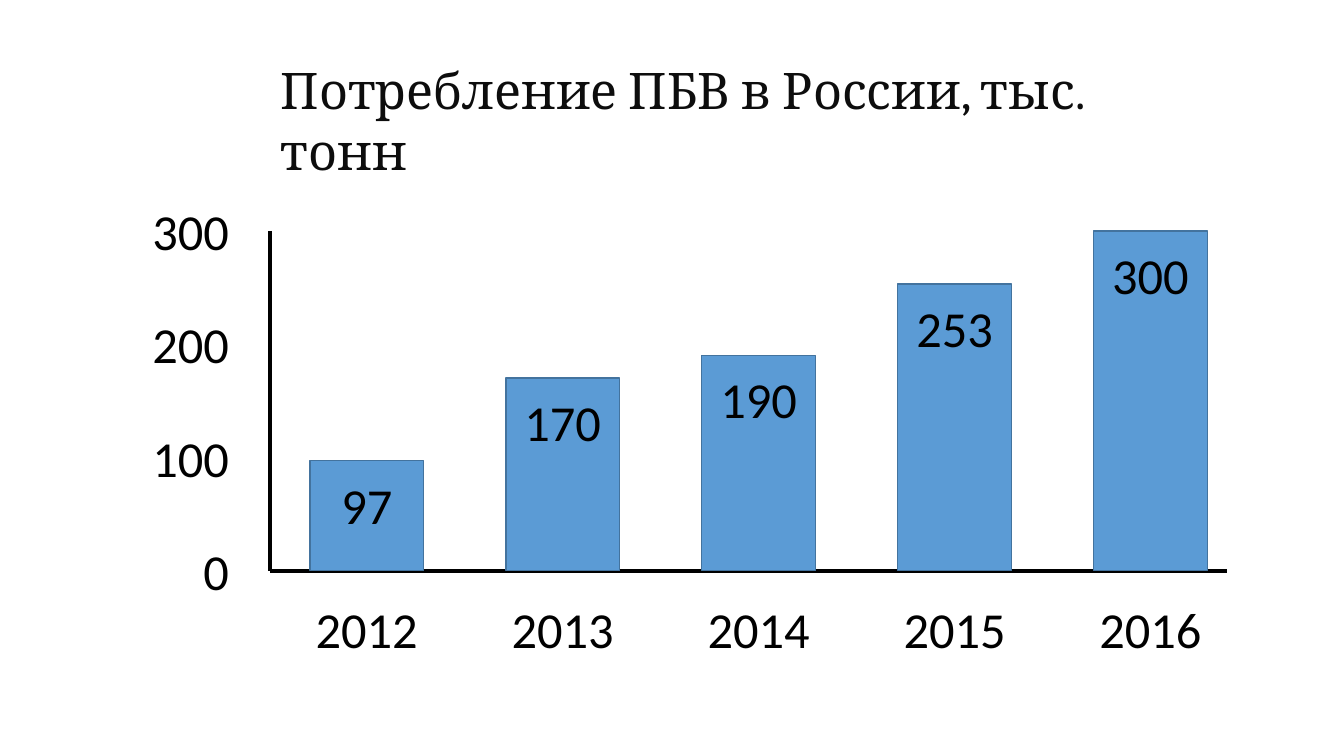
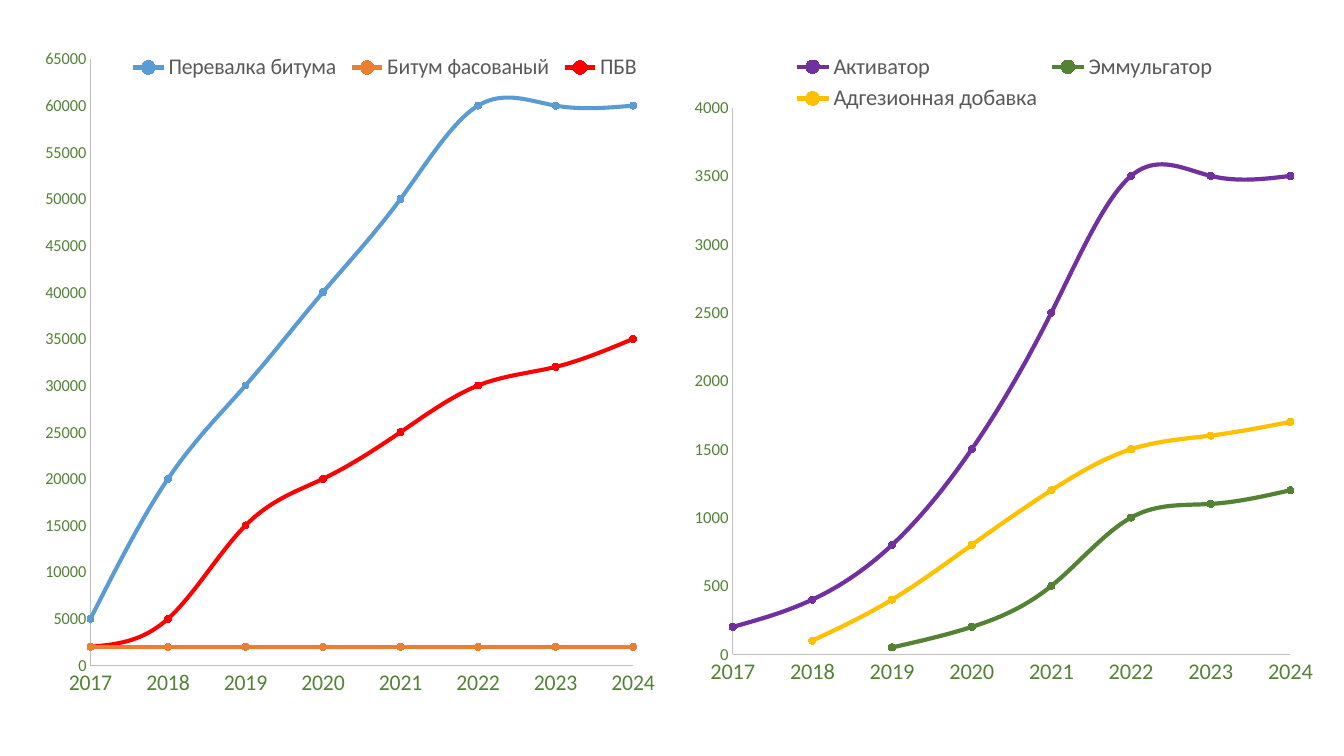
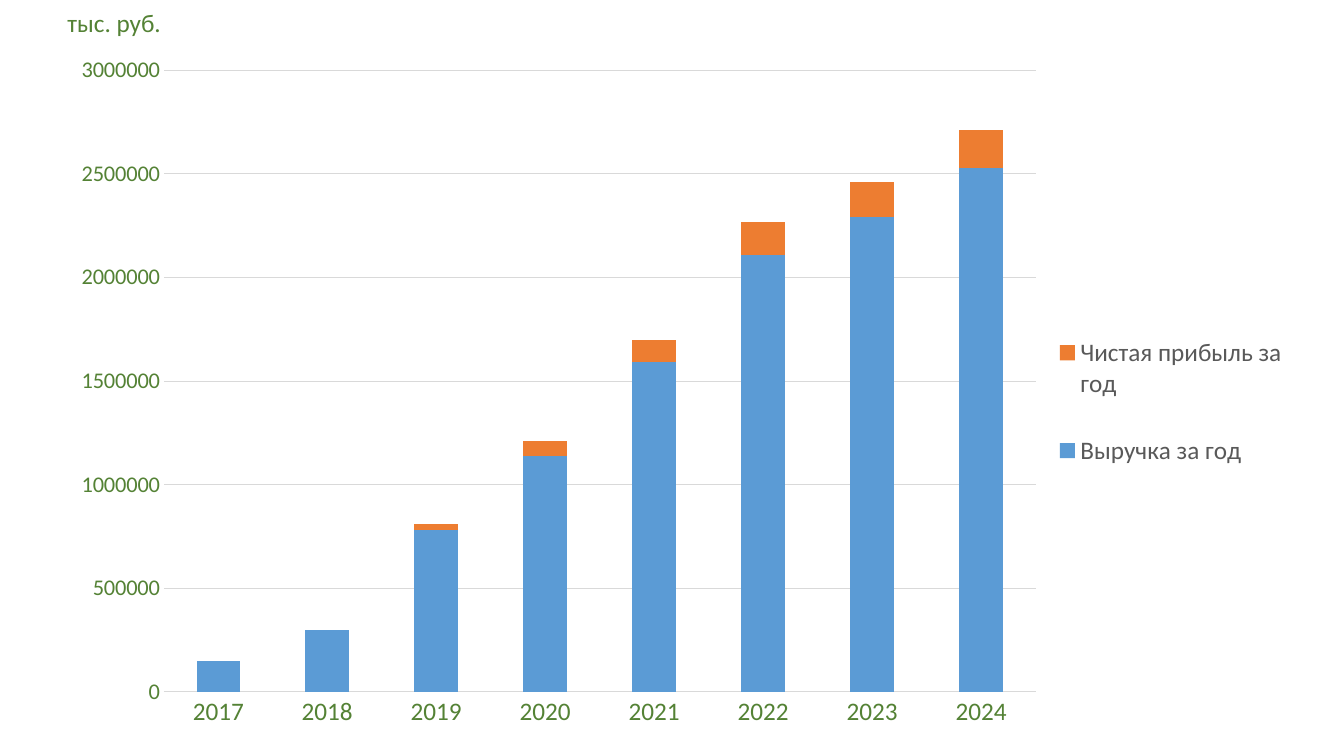
from lxml import etree
from pptx import Presentation
from pptx.chart.data import CategoryChartData, XyChartData
from pptx.dml.color import RGBColor
from pptx.enum.chart import XL_CHART_TYPE, XL_LEGEND_POSITION, XL_MARKER_STYLE, XL_TICK_MARK
from pptx.enum.shapes import MSO_CONNECTOR, MSO_SHAPE
from pptx.enum.text import PP_ALIGN
from pptx.oxml.ns import qn
from pptx.util import Cm, Pt

SCATTER = XL_CHART_TYPE.XY_SCATTER_SMOOTH
STACKED = XL_CHART_TYPE.COLUMN_STACKED
LEGEND_TOP = XL_LEGEND_POSITION.TOP
LEGEND_RIGHT = XL_LEGEND_POSITION.RIGHT
CIRCLE = XL_MARKER_STYLE.CIRCLE
NO_TICK = XL_TICK_MARK.NONE
STRAIGHT = MSO_CONNECTOR.STRAIGHT
RECTANGLE = MSO_SHAPE.RECTANGLE
LEFT, CENTER, RIGHT = PP_ALIGN.LEFT, PP_ALIGN.CENTER, PP_ALIGN.RIGHT

BODY_FONT, TITLE_FONT = "Calibri", "Cambria"
BLACK, TITLE_COLOR = "000000", "0D0D0D"
BLUE, BLUE_EDGE, ORANGE, RED = "5B9BD5", "43739E", "ED7D31", "FF0000"
PURPLE, GREEN, YELLOW = "7030A0", "548235", "FFC000"
LEGEND_GRAY, AXIS_GRAY, GRID_GRAY = "595959", "BFBFBF", "D9D9D9"
LAST_YEAR = 2024


def rgb(color):
    return RGBColor.from_string(color)


def style_font(font, size, color, name=BODY_FONT):
    font.size = Pt(size)
    font.name = name
    font.color.rgb = rgb(color)


def style_line(line, color, width):
    line.color.rgb = rgb(color)
    line.width = Pt(width)


def add_text(slide, text, left, top, width, height, size=36, color=BLACK,
             name=BODY_FONT, align=LEFT, wrap=False):
    box = slide.shapes.add_textbox(Cm(left), Cm(top), Cm(width), Cm(height))
    frame = box.text_frame
    frame.word_wrap = wrap
    frame.text = text
    paragraph = frame.paragraphs[0]
    paragraph.alignment = align
    style_font(paragraph.runs[0].font, size, color, name)


def add_line(slide, x1, y1, x2, y2):
    line = slide.shapes.add_connector(STRAIGHT, Cm(x1), Cm(y1), Cm(x2), Cm(y2))
    style_line(line.line, BLACK, 3)
    etree.SubElement(line._element.spPr, qn("a:effectLst"))


# Drawn column diagram: the box is the area between the axes
def draw_columns(slide, left, top, width, height, values, maximum, step):
    bottom = top + height
    bar_width, first_gap, last_gap = 2.87, 1.0, 0.48
    label_width, label_height = 3.12, 1.8
    pitch = (width - first_gap - last_gap - bar_width) / (len(values) - 1)

    add_line(slide, left, top, left, bottom)
    add_line(slide, left, bottom, left + width, bottom)

    # Bars with values and years
    for index, (year, value) in enumerate(values.items()):
        bar_left = left + first_gap + index * pitch
        bar_height = height * value / maximum
        bar_top = bottom - bar_height
        bar = slide.shapes.add_shape(RECTANGLE, Cm(bar_left), Cm(bar_top),
                                     Cm(bar_width), Cm(bar_height))
        bar.shadow.inherit = False
        bar.fill.solid()
        bar.fill.fore_color.rgb = rgb(BLUE)
        style_line(bar.line, BLUE_EDGE, 1)
        label_left = bar_left + (bar_width - label_width) / 2
        for text, label_top in ((value, bar_top + 0.2), (year, bottom + 0.56)):
            add_text(slide, str(text), label_left, label_top, label_width,
                     label_height, align=CENTER)

    # Scale
    for mark in range(0, maximum + 1, step):
        center = bottom - height * mark / maximum
        add_text(slide, str(mark), left - 3.25, center - label_height / 2,
                 2.46, label_height, align=RIGHT)


def set_layout(element, index, fractions, inner=False):
    """Place a plot area or a legend by fractions of the chart."""
    for old in element.findall(qn("c:layout")):
        element.remove(old)
    layout = etree.Element(qn("c:layout"))
    manual = etree.SubElement(layout, qn("c:manualLayout"))
    settings = [("layoutTarget", "inner")] if inner else []
    settings += [("xMode", "edge"), ("yMode", "edge")]
    settings += zip("xywh", fractions)
    for tag, value in settings:
        etree.SubElement(manual, qn("c:" + tag)).set("val", str(value))
    element.insert(index, layout)


def style_axis(axis, size, line_color=None):
    axis.has_major_gridlines = False
    axis.major_tick_mark = axis.minor_tick_mark = NO_TICK
    style_font(axis.tick_labels.font, size, GREEN)
    if line_color:
        style_line(axis.format.line, line_color, 0.75)
    else:
        axis.format.line.fill.background()


def add_chart(slide, kind, box, data, plot, legend_position, legend_size, legend_box=None):
    chart = slide.shapes.add_chart(kind, *map(Cm, box), data).chart
    chart.has_title = False
    style_font(chart.font, 10, BLACK)
    chart.plots[0].vary_by_categories = False
    set_layout(chart.plots[0]._element.getparent(), 0, plot, inner=True)
    chart.has_legend = True
    legend = chart.legend
    legend.position = legend_position
    legend.include_in_layout = False
    style_font(legend.font, legend_size, LEGEND_GRAY)
    if legend_box:
        set_layout(legend._element, 1, legend_box)
    return chart


# Smooth curves, every series ending in the last year
def growth_chart(slide, box, series_list, maximum, step, plot, legend_box=None):
    data = XyChartData()
    for name, _, values in series_list:
        series = data.add_series(name)
        for year, value in enumerate(values, LAST_YEAR + 1 - len(values)):
            series.add_data_point(year, value)
    chart = add_chart(slide, SCATTER, box, data, plot, LEGEND_TOP, 16, legend_box)

    years, amounts = chart.category_axis, chart.value_axis
    style_axis(years, 16, AXIS_GRAY)
    style_axis(amounts, 12, AXIS_GRAY)
    years.minimum_scale, years.maximum_scale, years.major_unit = 2017, LAST_YEAR, 1
    amounts.minimum_scale, amounts.maximum_scale, amounts.major_unit = 0, maximum, step

    for series, (_, color, _) in zip(chart.plots[0].series, series_list):
        style_line(series.format.line, color, 3)
        series.marker.style = CIRCLE
        series.marker.size = 5
        series.marker.format.fill.solid()
        series.marker.format.fill.fore_color.rgb = rgb(color)
        style_line(series.marker.format.line, color, 0.75)
        smooth = series._element.find(qn("c:smooth"))
        if smooth is None:
            smooth = etree.SubElement(series._element, qn("c:smooth"))
        smooth.set("val", "1")


# Stacked columns of revenue and profit
def revenue_chart(slide, box, series_list):
    data = CategoryChartData(number_format="0")
    data.categories = [str(year) for year in range(2017, LAST_YEAR + 1)]
    for name, _, values in series_list:
        data.add_series(name, values)
    chart = add_chart(slide, STACKED, box, data, (0.085, 0.04, 0.697, 0.891),
                      LEGEND_RIGHT, 18, (0.79, 0.37, 0.2, 0.29))
    style_axis(chart.category_axis, 18, GRID_GRAY)
    amounts = chart.value_axis
    style_axis(amounts, 16)
    amounts.minimum_scale, amounts.maximum_scale, amounts.major_unit = 0, 3000000, 500000
    amounts.has_major_gridlines = True
    style_line(amounts.major_gridlines.format.line, GRID_GRAY, 0.75)
    chart.plots[0].gap_width = 150
    chart.plots[0].overlap = 100
    for series, (_, color, _) in zip(chart.plots[0].series, series_list):
        series.format.fill.solid()
        series.format.fill.fore_color.rgb = rgb(color)


def consumption_slide(slide):
    values = {2012: 97, 2013: 170, 2014: 190, 2015: 253, 2016: 300}
    draw_columns(slide, 6.81, 5.82, 24.1, 8.56, values, 300, 100)
    add_text(slide, "Потребление ПБВ в России, тыс. тонн", 6.83, 1.37, 22.28, 3.3,
             color=TITLE_COLOR, name=TITLE_FONT, wrap=True)


def growth_slide(slide):
    main_products = [
        ("Перевалка битума", BLUE,
         (5000, 20000, 30000, 40000, 50000, 60000, 60000, 60000)),
        ("Битум фасованый", ORANGE, (2000,) * 8),
        ("ПБВ", RED, (2000, 5000, 15000, 20000, 25000, 30000, 32000, 35000)),
    ]
    additives = [
        ("Активатор", PURPLE, (200, 400, 800, 1500, 2500, 3500, 3500, 3500)),
        ("Эммульгатор", GREEN, (50, 200, 500, 1000, 1100, 1200)),
        ("Адгезионная добавка", YELLOW, (100, 400, 800, 1200, 1500, 1600, 1700)),
    ]
    growth_chart(slide, (1.14, 1.04, 15.37, 16.56), main_products, 65000, 5000,
                 (0.052, 0.027, 0.918, 0.923), (0.11, 0.01, 0.88, 0.06))
    growth_chart(slide, (17.2, 1.04, 16.23, 16.56), additives, 4000, 500,
                 (0.078, 0.101, 0.866, 0.832))


def revenue_slide(slide):
    results = [
        ("Выручка за год", BLUE,
         (150000, 300000, 780000, 1140000, 1590000, 2110000, 2290000, 2530000)),
        ("Чистая прибыль за год", ORANGE,
         (0, 0, 30000, 70000, 110000, 160000, 170000, 180000)),
    ]
    revenue_chart(slide, (1.45, 1.07, 31.52, 17.58), results)
    add_text(slide, "тыс. руб.", 1.45, 0.05, 2.9, 1.02, size=18, color=GREEN)


def main():
    presentation = Presentation()
    presentation.slide_width, presentation.slide_height = Cm(33.87), Cm(19.05)
    blank = presentation.slide_layouts[6]
    for build in (consumption_slide, growth_slide, revenue_slide):
        build(presentation.slides.add_slide(blank))
    presentation.save("out.pptx")


if __name__ == "__main__":
    main()
